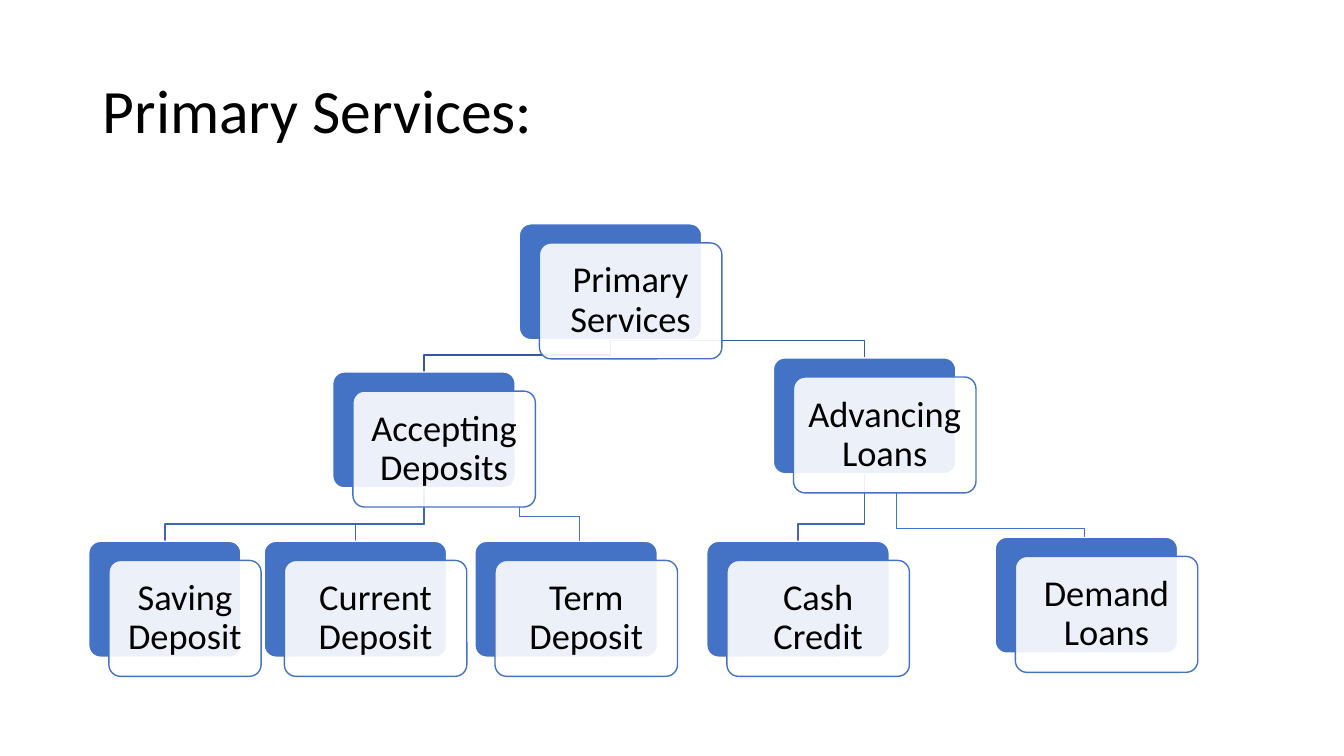
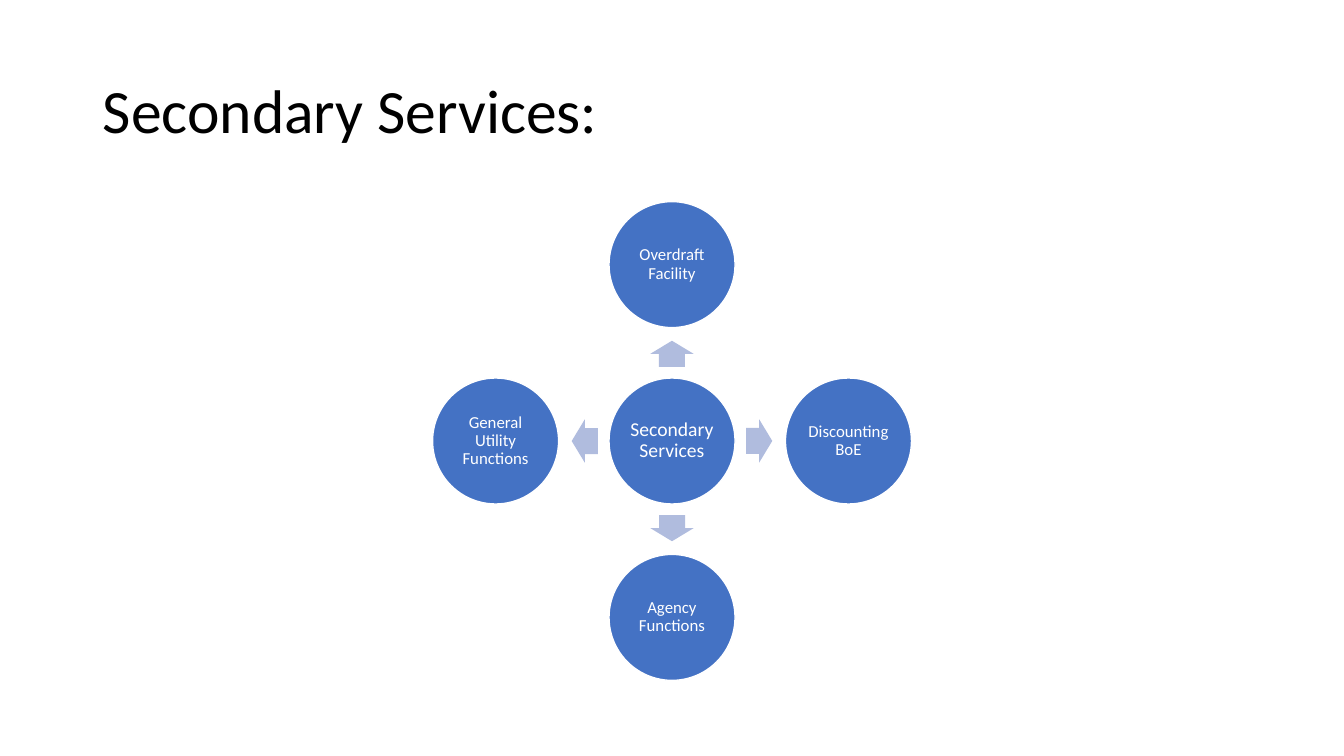
import math

import pptx
import pptx.dml.color
import pptx.enum.shapes
import pptx.enum.text
import pptx.oxml
import pptx.oxml.ns
import pptx.util

Inches = pptx.util.Inches
Pt = pptx.util.Pt
SHAPES = pptx.enum.shapes.MSO_SHAPE

FONT = "Calibri"
COLORS = {
    "accent": "4472C4",
    "white": "FFFFFF",
    "text": "000000",
    "upper_link": "365B9D",
    "lower_link": "3E67B2",
    "arrow": "B0BCDE",
}

# Organisation chart sizes, in inches
CARD_WIDTH, CARD_HEIGHT = 1.81, 1.15
FRONT_OFFSET = (0.2, 0.19)
LINK_DROP = 0.17

# Radial diagram sizes, in inches
CIRCLE_SIZE = 1.25
CIRCLE_DISTANCE, ARROW_DISTANCE = 1.75, 0.865
ARROW_SIZE = (0.26, 0.43)

# name: (text, left, top, width)
CARDS = {
    "primary": ("Primary Services", 5.15, 2.22, CARD_WIDTH),
    "accepting": ("Accepting Deposits", 3.3, 3.69, CARD_WIDTH),
    "current": ("Current Deposit", 2.62, 5.37, CARD_WIDTH),
    "saving": ("Saving Deposit", 0.88, 5.37, 1.51),
    "advancing": ("Advancing Loans", 7.67, 3.55, CARD_WIDTH),
    "cash": ("Cash Credit", 7.01, 5.37, CARD_WIDTH),
    "term": ("Term Deposit", 4.71, 5.37, CARD_WIDTH),
    "demand": ("Demand Loans", 9.87, 5.33, CARD_WIDTH),
}
LINKS = [
    ("advancing", "cash", "lower_link"),
    ("primary", "advancing", "upper_link"),
    ("accepting", "saving", "lower_link"),
    ("accepting", "current", "lower_link"),
    ("primary", "accepting", "upper_link"),
]
# (parent, child, start x, bend y, end x)
THIN_LINKS = [
    ("accepting", "term", 5.15, 5.12, 5.75),
    ("advancing", "demand", 8.89, 5.24, 10.75),
]
# (text, clockwise angle from the right)
SATELLITES = [
    ("Overdraft Facility", 270),
    ("Discounting BoE", 0),
    ("Agency Functions", 90),
    ("General Utility Functions", 180),
]


def color(name):
    return pptx.dml.color.RGBColor.from_string(COLORS[name])


def write(shape, text, size, color_name, alignment, inset):
    """Fill the shape with one formatted, vertically centred paragraph."""
    frame = shape.text_frame
    frame.word_wrap = True
    frame.auto_size = pptx.enum.text.MSO_AUTO_SIZE.NONE
    frame.vertical_anchor = pptx.enum.text.MSO_ANCHOR.MIDDLE
    frame.margin_left = frame.margin_right = Inches(inset)
    frame.margin_top = frame.margin_bottom = Inches(inset)
    paragraph = frame.paragraphs[0]
    paragraph.alignment = alignment
    paragraph.line_spacing = 0.9
    run = paragraph.add_run()
    run.text = text
    run.font.name = FONT
    run.font.size = Pt(size)
    run.font.color.rgb = color(color_name)


def add_box(slide, kind, left, top, width, height, fill, line=None):
    shape = slide.shapes.add_shape(
        kind, Inches(left), Inches(top), Inches(width), Inches(height))
    shape.shadow.inherit = False
    shape.fill.solid()
    shape.fill.fore_color.rgb = color(fill)
    if line:
        shape.line.color.rgb = color(line)
        shape.line.width = Pt(1)
    else:
        shape.line.fill.background()
    return shape


def set_opacity(shape, percent):
    fill_color = shape.fill._xPr.find(".//" + pptx.oxml.ns.qn("a:srgbClr"))
    alpha = pptx.oxml.parse_xml(
        f'<a:alpha {pptx.oxml.ns.nsdecls("a")} val="{percent * 1000}"/>')
    fill_color.append(alpha)


def add_titled_slide(presentation, title):
    slide = presentation.slides.add_slide(presentation.slide_layouts[5])
    shape = slide.shapes.title
    shape.left, shape.top = Inches(0.92), Inches(0.4)
    shape.width, shape.height = Inches(11.5), Inches(1.45)
    write(shape, title, 44, "text", pptx.enum.text.PP_ALIGN.LEFT, 0.1)
    return slide


# Organisation chart
def add_card(slide, text, left, top, width):
    back = add_box(slide, SHAPES.ROUNDED_RECTANGLE, left, top, width,
                   CARD_HEIGHT, "accent", "white")
    front = add_box(slide, SHAPES.ROUNDED_RECTANGLE, left + FRONT_OFFSET[0],
                    top + FRONT_OFFSET[1], width, CARD_HEIGHT,
                    "white", "accent")
    back.adjustments[0] = front.adjustments[0] = 0.1
    set_opacity(front, 90)
    write(front, text, 26, "text", pptx.enum.text.PP_ALIGN.CENTER, 0.11)


def add_link(slide, parent, child, color_name):
    """Draw an elbow from the foot of one card to the top of another."""
    _, parent_left, parent_top, parent_width = parent
    _, child_left, child_top, child_width = child
    start_x = parent_left + parent_width / 2
    end_x = child_left + child_width / 2
    bend = child_top - LINK_DROP
    builder = slide.shapes.build_freeform(
        Inches(start_x), Inches(parent_top + CARD_HEIGHT))
    corners = [(start_x, bend), (end_x, bend), (end_x, child_top)]
    builder.add_line_segments(
        [(Inches(x), Inches(y)) for x, y in corners], close=False)
    link = builder.convert_to_shape()
    link.shadow.inherit = False
    link.fill.background()
    link.line.color.rgb = color(color_name)
    link.line.width = Pt(1)


def add_thin_link(slide, parent, child, start_x, bend, end_x):
    """Join the foot of the parent's front panel to the top of the child."""
    foot = parent[2] + FRONT_OFFSET[1] + CARD_HEIGHT
    points = [(start_x, foot), (start_x, bend), (end_x, bend),
              (end_x, child[2])]
    for start, end in zip(points, points[1:]):
        connector = slide.shapes.add_connector(
            pptx.enum.shapes.MSO_CONNECTOR.STRAIGHT,
            *[Inches(value) for value in start + end])
        connector.line.color.rgb = color("accent")
        connector.line.width = Pt(0.5)
        connector._element.spPr.append(pptx.oxml.parse_xml(
            f'<a:effectLst {pptx.oxml.ns.nsdecls("a")}/>'))


def add_primary_slide(presentation):
    slide = add_titled_slide(presentation, "Primary Services:")
    for parent, child, color_name in LINKS:
        add_link(slide, CARDS[parent], CARDS[child], color_name)
    for card in CARDS.values():
        add_card(slide, *card)
    for parent, child, *route in THIN_LINKS:
        add_thin_link(slide, CARDS[parent], CARDS[child], *route)


# Radial diagram
def add_circle(slide, text, center_x, center_y, size):
    circle = add_box(slide, SHAPES.OVAL, center_x - CIRCLE_SIZE / 2,
                     center_y - CIRCLE_SIZE / 2, CIRCLE_SIZE, CIRCLE_SIZE,
                     "accent", "white")
    write(circle, text, size, "white", pptx.enum.text.PP_ALIGN.CENTER, 0.02)


def add_arrow(slide, center_x, center_y, angle):
    width, height = ARROW_SIZE
    arrow = add_box(slide, SHAPES.RIGHT_ARROW, center_x - width / 2,
                    center_y - height / 2, width, height, "arrow")
    arrow.adjustments[0], arrow.adjustments[1] = 0.6, 0.5
    arrow.rotation = angle


def add_radial(slide, center_x, center_y):
    add_circle(slide, "Secondary Services", center_x, center_y, 14)
    for text, angle in SATELLITES:
        across = math.cos(math.radians(angle))
        down = math.sin(math.radians(angle))
        add_arrow(slide, center_x + ARROW_DISTANCE * across,
                  center_y + ARROW_DISTANCE * down, angle)
        add_circle(slide, text, center_x + CIRCLE_DISTANCE * across,
                   center_y + CIRCLE_DISTANCE * down, 12)


def add_secondary_slide(presentation):
    slide = add_titled_slide(presentation, "Secondary Services:")
    add_radial(slide, 6.665, 4.375)


def main():
    presentation = pptx.Presentation()
    presentation.slide_width = Inches(13.33)
    presentation.slide_height = Inches(7.5)
    add_primary_slide(presentation)
    add_secondary_slide(presentation)
    presentation.save("out.pptx")


if __name__ == "__main__":
    main()
